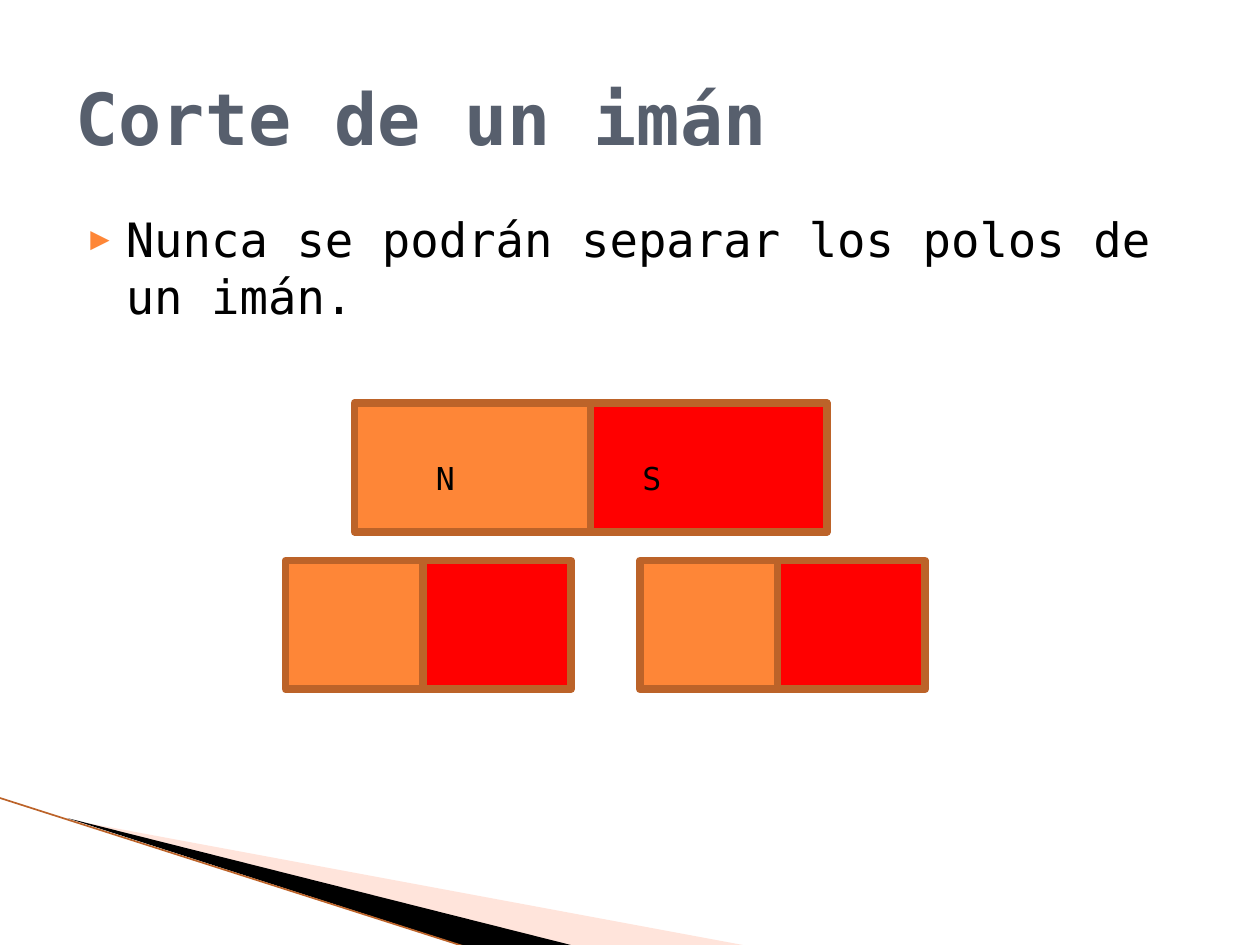
from lxml.etree import SubElement
from pptx import Presentation
from pptx.dml.color import RGBColor
from pptx.enum.shapes import MSO_CONNECTOR, MSO_SHAPE
from pptx.enum.text import MSO_ANCHOR, MSO_AUTO_SIZE, PP_ALIGN
from pptx.oxml.ns import qn
from pptx.util import Pt

FONT = "DejaVu Sans Mono"
SLATE = RGBColor(0x57, 0x5F, 0x6D)
BLACK = RGBColor(0x00, 0x00, 0x00)
ORANGE = RGBColor(0xFE, 0x86, 0x37)
RED = RGBColor(0xFF, 0x00, 0x00)
BROWN = RGBColor(0xBC, 0x63, 0x29)
PEACH = RGBColor(0xFF, 0xBC, 0xA5)

MAGNET_HEIGHT = 73.5


def write_text(frame, text, size, color, bold=False):
    frame.word_wrap = True
    paragraph = frame.paragraphs[0]
    paragraph.alignment = PP_ALIGN.LEFT
    run = paragraph.add_run()
    run.text = text
    formats = {"name": FONT, "size": Pt(size), "bold": bold}
    for name, value in formats.items():
        setattr(run.font, name, value)
    run.font.color.rgb = color
    return paragraph


def set_title(slide, text):
    title = slide.shapes.title
    box = {"left": 36, "top": 21.6, "width": 648, "height": 90}
    for name, value in box.items():
        setattr(title, name, Pt(value))
    title.text_frame.auto_size = MSO_AUTO_SIZE.NONE
    title.text_frame.vertical_anchor = MSO_ANCHOR.MIDDLE
    write_text(title.text_frame, text, 41, SLATE, bold=True)


def add_text(slide, text, left, top, width, height, size):
    shape = slide.shapes.add_textbox(Pt(left), Pt(top), Pt(width), Pt(height))
    return write_text(shape.text_frame, text, size, BLACK)


def add_bullet(paragraph):
    properties = paragraph._p.get_or_add_pPr()
    properties.set("marL", str(Pt(28.8)))
    properties.set("indent", str(Pt(-20.2)))
    color = SubElement(properties, qn("a:buClr"))
    SubElement(color, qn("a:srgbClr"), val=str(ORANGE))
    SubElement(properties, qn("a:buSzPct"), val="68000")
    SubElement(properties, qn("a:buFont"), typeface=FONT)
    SubElement(properties, qn("a:buChar"), char="▶")


def add_magnet(slide, left, top, north_width, south_width):
    poles = ((left, north_width, ORANGE), (left + north_width, south_width, RED))
    for pole_left, width, color in poles:
        shape = slide.shapes.add_shape(
            MSO_SHAPE.RECTANGLE, Pt(pole_left), Pt(top), Pt(width), Pt(MAGNET_HEIGHT))
        shape.shadow.inherit = False
        shape.fill.solid()
        shape.fill.fore_color.rgb = color
        shape.line.color.rgb = BROWN
        shape.line.width = Pt(4.33)


def add_wedge(slide, points, color, opacity=100):
    start, *others = [(Pt(x), Pt(y)) for x, y in points]
    builder = slide.shapes.build_freeform(*start)
    builder.add_line_segments(others, close=True)
    shape = builder.convert_to_shape()
    shape.shadow.inherit = False
    shape.fill.solid()
    shape.fill.fore_color.rgb = color
    shape.line.fill.background()
    if opacity < 100:
        fill_color = shape._element.spPr.find(qn("a:solidFill"))[0]
        SubElement(fill_color, qn("a:alpha"), val=str(opacity * 1000))


def add_edge(slide, start_x, start_y, end_x, end_y):
    line = slide.shapes.add_connector(
        MSO_CONNECTOR.STRAIGHT, Pt(start_x), Pt(start_y), Pt(end_x), Pt(end_y))
    line.line.color.rgb = BROWN
    line.line.width = Pt(0.95)
    SubElement(line._element.spPr, qn("a:effectLst"))


def main():
    presentation = Presentation()
    presentation.slide_width, presentation.slide_height = Pt(720), Pt(540)
    slide = presentation.slides.add_slide(presentation.slide_layouts[5])

    # Corner decoration
    add_wedge(slide, [(39.6, 468.4), (428.4, 540.7), (328.3, 540.7)], PEACH, 40)
    add_wedge(slide, [(38.5, 467.5), (329, 540.7), (267.8, 541.4)], BLACK)
    add_edge(slide, -0.7, 455.8, 267.1, 541.4)

    # Title and statement
    set_title(slide, "Corte de un imán")
    statement = "Nunca se podrán separar los polos de un imán."
    add_bullet(add_text(slide, statement, 36, 116.6, 648, 356.4, 27))

    # Whole magnet with its pole labels
    add_magnet(slide, 202.5, 230.4, 135, 135)
    for label, left in (("N", 242), ("S", 360)):
        add_text(slide, label, left, 258.5, 56.2, 28.8, 18)

    # The two magnets left after the cut
    for left in (163.2, 365.6):
        add_magnet(slide, left, 320.4, 78.75, 84.4)

    presentation.save("out.pptx")


if __name__ == "__main__":
    main()
